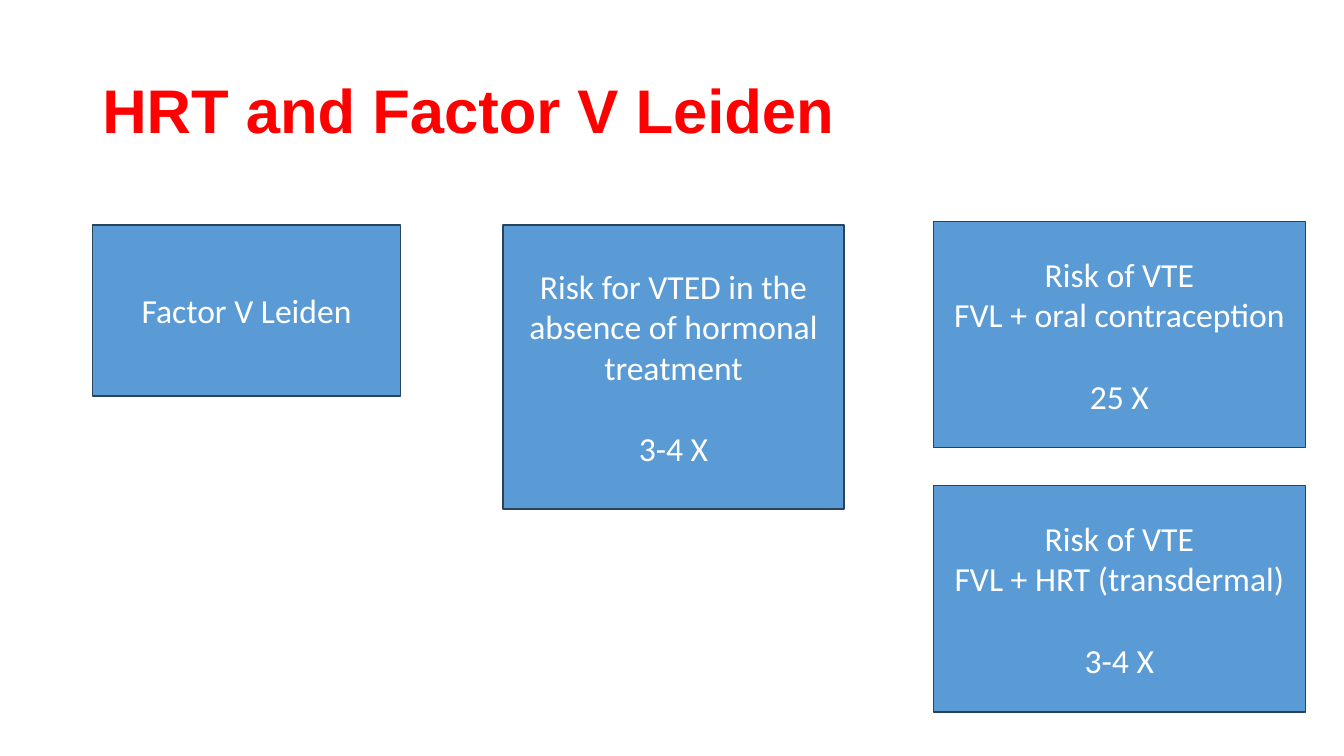
from dataclasses import dataclass

from pptx import Presentation
from pptx.dml.color import RGBColor
from pptx.enum.shapes import MSO_SHAPE
from pptx.enum.text import MSO_ANCHOR as Anchor, PP_ALIGN as Align
from pptx.slide import Slide
from pptx.util import Pt

RED, WHITE, BLUE, NAVY = "FF0000", "FFFFFF", "5B9BD5", "28445D"
BLANK_LAYOUT = 6
BODY_SIZE = 24
RISK_GAP = 29.3  # one line of body text above the risk figure


@dataclass(frozen=True)
class RiskBox:
    left: float
    top: float
    width: float
    height: float
    lines: tuple[str, ...]
    risk: str = ""


# The two treatment boxes share a column and a size
TREATMENT_LEFT, TREATMENT_WIDTH, TREATMENT_HEIGHT = 666.7, 265.7, 161.5

RISK_BOXES = (
    RiskBox(66, 160.6, 220.3, 122.4, ("Factor V Leiden",)),
    RiskBox(359.3, 160.6, 243.6, 203,
            ("Risk for VTED in the absence of hormonal treatment",), "3-4 X"),
    RiskBox(TREATMENT_LEFT, 158.4, TREATMENT_WIDTH, TREATMENT_HEIGHT,
            ("Risk of VTE", "FVL + oral contraception"), "25 X"),
    RiskBox(TREATMENT_LEFT, 347, TREATMENT_WIDTH, TREATMENT_HEIGHT,
            ("Risk of VTE", "FVL + HRT (transdermal)"), "3-4 X"),
)


def color(hex_code: str) -> RGBColor:
    return RGBColor.from_string(hex_code)


def add_title(slide: Slide, title: str) -> None:
    heading = slide.shapes.add_textbox(Pt(66), Pt(28.8), Pt(828), Pt(104.4))
    frame = heading.text_frame
    frame.word_wrap = True
    frame.vertical_anchor = Anchor.MIDDLE
    frame.text = title
    line = frame.paragraphs[0]
    line.line_spacing = 0.9
    font = line.runs[0].font
    font.name, font.size, font.bold = "Arial", Pt(44), True
    font.color.rgb = color(RED)


def add_risk_box(slide: Slide, box: RiskBox) -> None:
    panel = slide.shapes.add_shape(
        MSO_SHAPE.RECTANGLE,
        Pt(box.left), Pt(box.top), Pt(box.width), Pt(box.height))
    panel.shadow.inherit = False
    panel.fill.solid()
    panel.fill.fore_color.rgb = color(BLUE)
    panel.line.color.rgb = color(NAVY)
    panel.line.width = Pt(1)

    frame = panel.text_frame
    frame.word_wrap = True
    frame.vertical_anchor = Anchor.MIDDLE
    texts = box.lines + ((box.risk,) if box.risk else ())
    frame.text = "\n".join(texts)
    for line in frame.paragraphs:
        line.alignment = Align.CENTER
        font = line.runs[0].font
        font.name, font.size = "Calibri", Pt(BODY_SIZE)
        font.color.rgb = color(WHITE)
    if box.risk:
        frame.paragraphs[-1].space_before = Pt(RISK_GAP)


def main() -> None:
    deck = Presentation()
    deck.slide_width, deck.slide_height = Pt(960), Pt(540)
    slide = deck.slides.add_slide(deck.slide_layouts[BLANK_LAYOUT])

    add_title(slide, "HRT and Factor V Leiden")
    for box in RISK_BOXES:
        add_risk_box(slide, box)

    deck.save("out.pptx")


if __name__ == "__main__":
    main()
